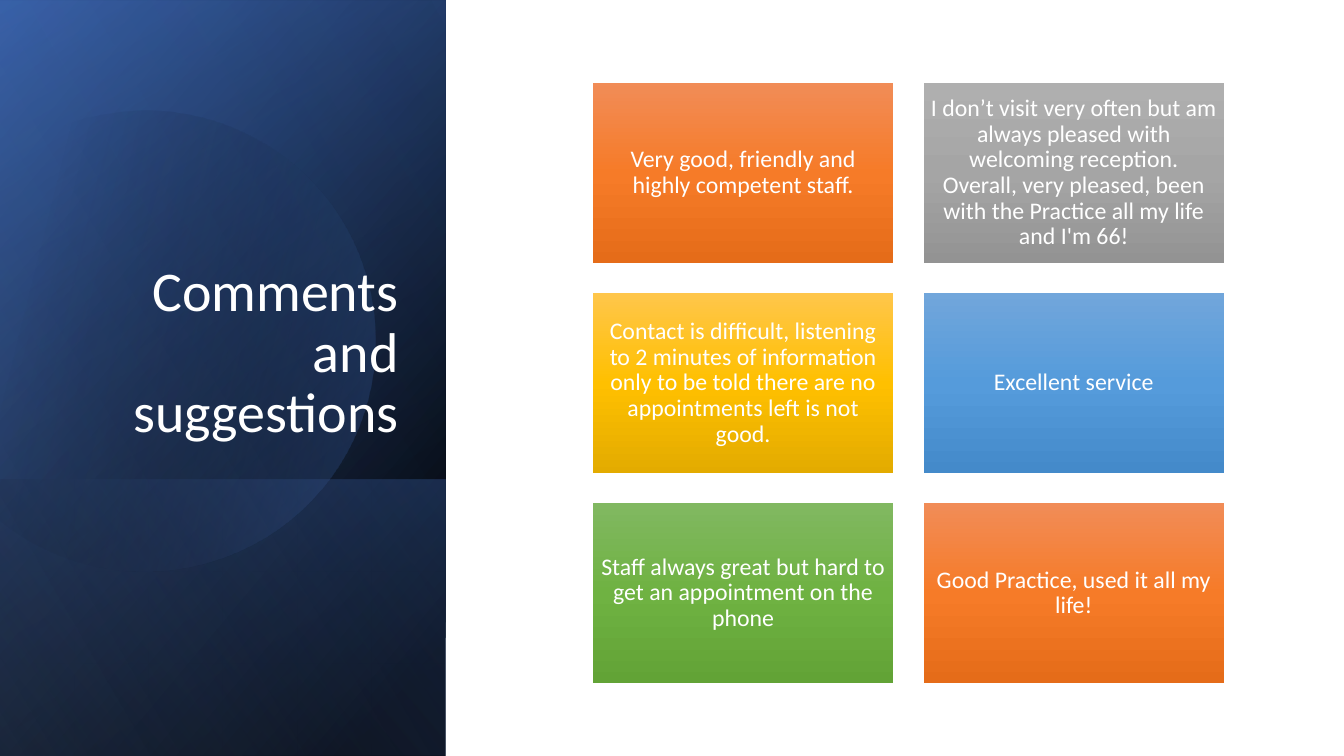
import copy
import math

import pptx
import pptx.dml.color
import pptx.enum.shapes
import pptx.enum.text
import pptx.oxml.ns
import pptx.oxml.xmlchemy
import pptx.util

ALIGN = pptx.enum.text.PP_ALIGN
ANCHOR = pptx.enum.text.MSO_ANCHOR
RECT = pptx.enum.shapes.MSO_SHAPE.RECTANGLE
qn = pptx.oxml.ns.qn

ORANGE = [(0, "F18C57"), (50, "F67B28"), (100, "E56C19")]
GREY = [(0, "AFAFAF"), (50, "A5A5A5"), (100, "939393")]
GOLD = [(0, "FFC64B"), (50, "FFC000"), (100, "E3AB00")]
BLUE = [(0, "71A6DB"), (50, "559BDB"), (100, "448ACA")]
GREEN = [(0, "81B861"), (50, "6FB242"), (100, "62A336")]

COMMENTS = [
    ("Very good, friendly and highly competent staff.", ORANGE),
    ("I don’t visit very often but am always pleased with welcoming reception. "
     "Overall, very pleased, been with the Practice all my life and I'm 66!", GREY),
    ("Contact is difficult, listening to 2 minutes of information only to be told "
     "there are no appointments left is not good.", GOLD),
    ("Excellent service", BLUE),
    ("Staff always great but hard to get an appointment on the phone", GREEN),
    ("Good Practice, used it all my life!", ORANGE),
]

PANEL = (-154, 154, 750, 442)
PANEL_LAYERS = [
    (PANEL, [(8, "000000"), (100, "2F5597")], 50),
    ((-154, 155, 750, 442), [(0, "000000", 0), (99, "4472C4", 46)], 30),
    ((84, 392, 274, 442), [(2, "4472C4", 29), (100, "000000", 30)], 130),
]
PANEL_GLOW = (PANEL, [(0, "000000", 0), (99, "8FAADC", 11)], 120)

DISC_CURVES = [
    [(149, 110), (246, 112), (335, 177), (363, 275)],
    [(363, 275), (398, 397), (328, 523), (207, 558)],
    [(207, 558), (131, 580), (53, 561), (-3, 514)],
    [(-15, 503)],
    [(-15, 175)],
    [(0, 161), (23, 142), (50, 128), (80, 119)],
    [(80, 119), (103, 113), (126, 110), (149, 110)],
]


def px(n):
    return pptx.util.Emu(round(n * 9144))


def rgb(value):
    return pptx.dml.color.RGBColor.from_string(value)


def bezier(ends, steps=24):
    n = len(ends) - 1
    if n == 0:
        return ends
    return [
        tuple(sum(math.comb(n, k) * (1 - t) ** (n - k) * t ** k * pt[axis]
                  for k, pt in enumerate(ends)) for axis in (0, 1))
        for t in (i / steps for i in range(steps + 1))
    ]


def turn(pt, centre, degrees):
    a = math.radians(degrees)
    dx, dy = pt[0] - centre[0], pt[1] - centre[1]
    return (centre[0] + dx * math.cos(a) - dy * math.sin(a),
            centre[1] + dx * math.sin(a) + dy * math.cos(a))


def write(tf, text, size=17, color="FFFFFF", align=ALIGN.CENTER,
          anchor=ANCHOR.MIDDLE, inset=(7, 7)):
    tf.word_wrap = True
    tf.vertical_anchor = anchor
    tf.margin_left = tf.margin_right = px(inset[0])
    tf.margin_top = tf.margin_bottom = px(inset[1])
    p = tf.paragraphs[0]
    p.alignment = align
    p.line_spacing = 0.9
    r = p.add_run()
    r.text = text
    r.font.name = "Calibri"
    r.font.size = pptx.util.Pt(size)
    r.font.color.rgb = rgb(color)


class Deck:
    def __init__(self, width, height):
        self.prs = pptx.Presentation()
        self.prs.slide_width, self.prs.slide_height = px(width), px(height)
        self.s = self.prs.slides.add_slide(self.prs.slide_layouts[6])

    def paint(self, sp, stops, angle):
        sp.shadow.inherit = False
        sp.line.fill.background()
        sp.fill.gradient()
        sp.fill.gradient_angle = 360 - angle
        gs_list = sp._element.spPr.find(qn("a:gradFill")).find(qn("a:gsLst"))
        while len(gs_list) < len(stops):
            gs_list.append(copy.deepcopy(gs_list[0]))
        for gs, stop, (pos, color, *alpha) in zip(gs_list, sp.fill.gradient_stops, stops):
            stop.position = pos / 100
            stop.color.rgb = rgb(color)
            if alpha:
                tag = pptx.oxml.xmlchemy.OxmlElement("a:alpha")
                tag.set("val", str(alpha[0] * 1000))
                gs[0].append(tag)

    def rect(self, box, stops, angle):
        sp = self.s.shapes.add_shape(RECT, *map(px, box))
        self.paint(sp, stops, angle)
        return sp

    def layer(self, box, stops, angle):
        sp = self.rect(box, stops, angle)
        sp.rotation = 90
        sp._element.spPr.find(qn("a:xfrm")).set("flipH", "1")

    def disc(self, curves, centre, rotation, stops, angle):
        pts = [turn(pt, centre, -rotation) for c in curves for pt in bezier(c)]
        pts = [(px(x), px(y)) for x, y in pts]
        builder = self.s.shapes.build_freeform(*pts[0], scale=1.0)
        builder.add_line_segments(pts[1:], close=True)
        sp = builder.convert_to_shape()
        sp.rotation = rotation
        self.paint(sp, stops, angle)

    def title(self, box, text):
        sp = self.s.shapes.add_textbox(*map(px, box))
        write(sp.text_frame, text, size=40, align=ALIGN.RIGHT,
              anchor=ANCHOR.BOTTOM, inset=(10, 5))

    def card(self, box, text, stops):
        write(self.rect(box, stops, 90).text_frame, text)


def main():
    deck = Deck(1333, 750)
    for layer in PANEL_LAYERS:
        deck.layer(*layer)
    deck.disc(DISC_CURVES, (158, 334), 343.9,
              [(29, "000000", 0), (100, "4472C4", 43)], 30)
    deck.layer(*PANEL_GLOW)
    deck.title((64, 184, 341, 262), "Comments and suggestions")
    for i, (text, stops) in enumerate(COMMENTS):
        row, col = divmod(i, 2)
        deck.card((588 + 328 * col, 82 + 208.5 * row, 298, 179), text, stops)
    deck.prs.save("out.pptx")


if __name__ == "__main__":
    main()
